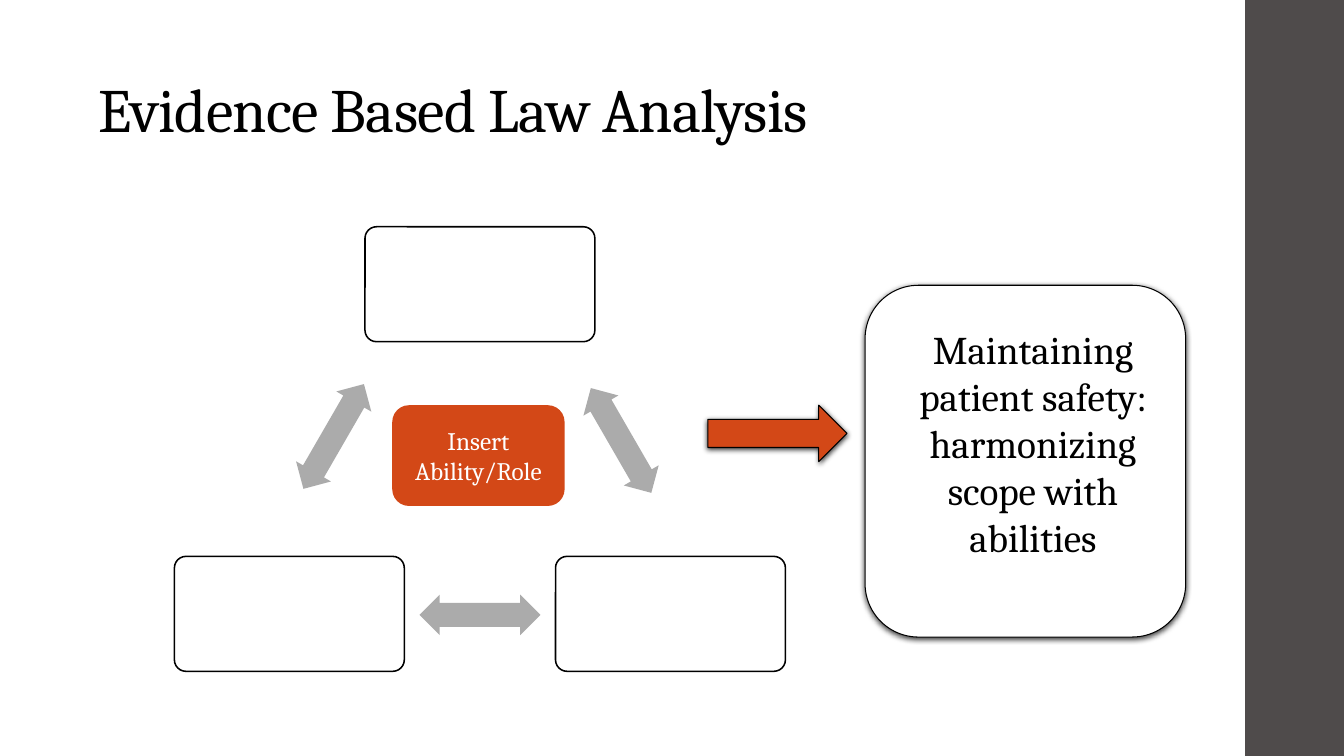
from dataclasses import dataclass

import pptx
import pptx.dml.color
import pptx.enum.shapes
import pptx.enum.text
import pptx.oxml
import pptx.oxml.ns
import pptx.util

Inches = pptx.util.Inches
SHAPE = pptx.enum.shapes.MSO_SHAPE
ALIGN = pptx.enum.text.PP_ALIGN
ANCHOR = pptx.enum.text.MSO_ANCHOR


@dataclass(frozen=True)
class Theme:
    font: str = "Cambria"
    black: str = "000000"
    white: str = "FFFFFF"
    band: str = "4F4B4B"
    arrow: str = "ABABAB"
    accent: str = "D34817"
    title_size: int = 44
    outcome_size: int = 28
    role_size: int = 18
    thin: float = 0.75
    medium: float = 1.1


THEME = Theme()


def rgb(value):
    return pptx.dml.color.RGBColor.from_string(value)


def write_text(tf, text, size, color=THEME.black, align=ALIGN.LEFT,
               anchor=ANCHOR.TOP, line_spacing=None, tracking=None):
    tf.word_wrap = True
    tf.vertical_anchor = anchor
    p = tf.paragraphs[0]
    p.alignment = align
    p.line_spacing = line_spacing
    r = p.add_run()
    r.text = text
    r.font.name = THEME.font
    r.font.size = pptx.util.Pt(size)
    r.font.color.rgb = rgb(color)
    if tracking is not None:
        r.font._element.set("spc", str(int(tracking * 100)))


def add_shadow(sp):
    ns = pptx.oxml.ns.nsdecls("a")
    effects = pptx.oxml.parse_xml(
        f'<a:effectLst {ns}><a:outerShdw blurRad="50800" dist="15240" '
        f'dir="5400000" algn="ctr" rotWithShape="0">'
        f'<a:srgbClr val="{THEME.black}"><a:alpha val="75000"/></a:srgbClr>'
        f'</a:outerShdw></a:effectLst>')
    props = sp._element.spPr
    props.replace(props.find(pptx.oxml.ns.qn("a:effectLst")), effects)


def add_box(s, kind, left, top, width, height, fill, line=None,
            adjust=(), rotation=0, shadow=False):
    sp = s.shapes.add_shape(kind, Inches(left), Inches(top),
                            Inches(width), Inches(height))
    sp.shadow.inherit = False
    sp.fill.solid()
    sp.fill.fore_color.rgb = rgb(fill)
    if line is None:
        sp.line.fill.background()
    else:
        sp.line.color.rgb = rgb(THEME.black)
        sp.line.width = pptx.util.Pt(line)
    for i, value in enumerate(adjust):
        sp.adjustments[i] = value
    sp.rotation = rotation
    if shadow:
        add_shadow(sp)
    return sp


def add_title(s, text):
    sp = s.shapes.title
    sp.left, sp.top = Inches(0.88), Inches(0.25)
    sp.width, sp.height = Inches(12), Inches(1.25)
    write_text(sp.text_frame, text, THEME.title_size, anchor=ANCHOR.BOTTOM,
               line_spacing=0.9, tracking=-0.5)


def add_cycle(s):
    for left, top in ((3.62, 2.25), (5.51, 5.52), (1.73, 5.52)):
        add_box(s, SHAPE.ROUNDED_RECTANGLE, left, top, 2.28, 1.14,
                THEME.white, line=THEME.medium, adjust=(0.1,))
    for left, top, rotation in ((5.56, 4.17, 60), (4.16, 5.9, 180), (2.71, 4.13, 300)):
        add_box(s, SHAPE.LEFT_RIGHT_ARROW, left, top, 1.2, 0.4,
                THEME.arrow, adjust=(0.6, 0.5), rotation=rotation)
    role = add_box(s, SHAPE.ROUNDED_RECTANGLE, 3.89, 4.02, 1.71, 1, THEME.accent)
    write_text(role.text_frame, "Insert Ability/Role", THEME.role_size,
               color=THEME.white, align=ALIGN.CENTER, anchor=ANCHOR.MIDDLE)


def add_outcome(s):
    add_box(s, SHAPE.RIGHT_ARROW, 7.02, 4.02, 1.38, 0.56, THEME.accent,
            line=THEME.thin, shadow=True)
    add_box(s, SHAPE.ROUNDED_RECTANGLE, 8.58, 2.83, 3.18, 3.49, THEME.white,
            line=THEME.thin, shadow=True)
    sp = s.shapes.add_textbox(Inches(8.73), Inches(3.18), Inches(3.03), Inches(2.46))
    write_text(sp.text_frame,
               "Maintaining patient safety: harmonizing scope with abilities",
               THEME.outcome_size, align=ALIGN.CENTER)


def main():
    prs = pptx.Presentation()
    prs.slide_width, prs.slide_height = Inches(13.33), Inches(7.5)
    s = prs.slides.add_slide(prs.slide_layouts[5])
    add_box(s, SHAPE.RECTANGLE, 12.35, 0, 0.98, 7.5, THEME.band)
    add_title(s, "Evidence Based Law Analysis")
    add_cycle(s)
    add_outcome(s)
    prs.save("out.pptx")


if __name__ == "__main__":
    main()
